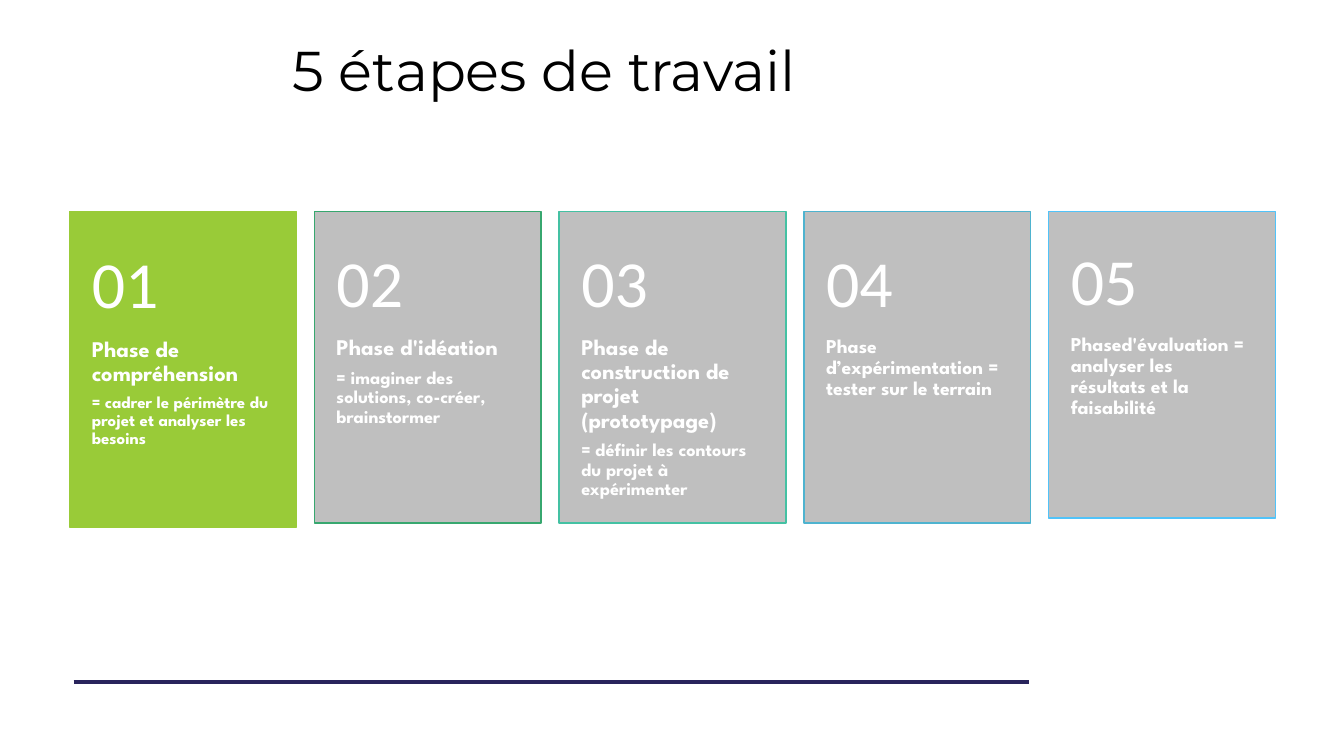
from dataclasses import dataclass

from lxml.etree import SubElement
from pptx import Presentation
from pptx.dml.color import RGBColor
from pptx.enum.shapes import MSO_CONNECTOR, MSO_SHAPE
from pptx.enum.text import MSO_ANCHOR
from pptx.oxml.ns import qn
from pptx.util import Inches, Pt


@dataclass(frozen=True)
class Theme:
    """Colours, fonts and type sizes of the slide."""
    ink: str = "000000"
    white: str = "FFFFFF"
    rule: str = "29245C"
    active: str = "99CB38"
    inactive: str = "BFBFBF"
    title_font: str = "Montserrat"
    number_font: str = "Calibri"
    phase_font: str = "League Spartan"
    title_size: int = 40
    number_size: int = 47
    phase_size: int = 16
    long_phase_size: int = 14
    detail_size: int = 13
    small_detail_size: int = 12


THEME = Theme()
CARD_LEFT, CARD_TOP, CARD_WIDTH, CARD_PITCH = 0.69, 2.1, 2.25, 2.4275
NUMBER_HEIGHT, NUMBER_RISE = 1.08, 1.04

STEPS = [
    (3.13, THEME.active, THEME.active,
     [("Phase de compréhension", THEME.phase_size),
      ("= cadrer le périmètre du projet et analyser les besoins", THEME.small_detail_size)]),
    (3.09, THEME.inactive, "37A76F",
     [("Phase d'idéation", THEME.phase_size),
      ("= imaginer des solutions, co-créer, brainstormer", THEME.detail_size)]),
    (3.09, THEME.inactive, "44C1A3",
     [("Phase de construction de projet (prototypage)", THEME.phase_size),
      ("= définir les contours du projet à expérimenter", THEME.detail_size)]),
    (3.09, THEME.inactive, "4EB3CF",
     [("Phase d’expérimentation = tester sur le terrain", THEME.long_phase_size)]),
    (3.04, THEME.inactive, "51C3F9",
     [("Phased'évaluation = analyser les résultats et la faisabilité", THEME.long_phase_size)]),
]


def add_text(slide, box, lines, font, color, insets, anchor=MSO_ANCHOR.TOP, bold=False, gap=0.35):
    """Add a wrapped text box with one paragraph per (text, size) pair."""
    frame = slide.shapes.add_textbox(*map(Inches, box)).text_frame
    frame.word_wrap = True
    frame.vertical_anchor = anchor
    frame.margin_left, frame.margin_top, frame.margin_right, frame.margin_bottom = map(Inches, insets)
    for index, (text, size) in enumerate(lines):
        paragraph = frame.add_paragraph() if index else frame.paragraphs[0]
        paragraph.line_spacing = 0.9
        paragraph.space_after = Pt(round(size * gap, 1))
        run = paragraph.add_run()
        run.text = text
        run.font.name = font
        run.font.size = Pt(size)
        run.font.bold = bold
        run.font.color.rgb = RGBColor.from_string(color)


def add_card(slide, left, height, fill, border):
    """Add the rectangle behind one step."""
    card = slide.shapes.add_shape(
        MSO_SHAPE.RECTANGLE, Inches(left), Inches(CARD_TOP), Inches(CARD_WIDTH), Inches(height))
    card.shadow.inherit = False
    card.fill.solid()
    card.fill.fore_color.rgb = RGBColor.from_string(fill)
    card.line.color.rgb = RGBColor.from_string(border)
    card.line.width = Pt(1)


def add_step(slide, index, height, fill, border, lines):
    """Add one numbered step, its text filling the lower 60 % of the card."""
    left = CARD_LEFT + index * CARD_PITCH
    phase_top = CARD_TOP + 0.4 * height
    add_card(slide, left, height, fill, border)
    add_text(slide, (left, phase_top, CARD_WIDTH, 0.6 * height), lines,
             THEME.phase_font, THEME.white, (0.22, 0, 0.22, 0.36), bold=True)
    add_text(slide, (left, phase_top - NUMBER_RISE, CARD_WIDTH, NUMBER_HEIGHT),
             [(f"{index + 1:02d}", THEME.number_size)],
             THEME.number_font, THEME.white, (0.22, 0.18, 0.22, 0.18), MSO_ANCHOR.MIDDLE)


def add_rule(slide, start, end, y):
    """Add the horizontal rule at the foot of the slide."""
    rule = slide.shapes.add_connector(
        MSO_CONNECTOR.STRAIGHT, Inches(start), Inches(y), Inches(end), Inches(y))
    rule.line.color.rgb = RGBColor.from_string(THEME.rule)
    rule.line.width = Pt(3)
    SubElement(rule._element.spPr, qn("a:effectLst"))


def main():
    """Build the slide and save it."""
    deck = Presentation()
    deck.slide_width, deck.slide_height = Inches(13.33), Inches(7.5)
    slide = deck.slides.add_slide(deck.slide_layouts[6])
    add_rule(slide, 0.73, 10.21, 6.77)
    add_text(slide, (2.8, 0, 10, 1.45), [("5 étapes de travail", THEME.title_size)],
             THEME.title_font, THEME.ink, (0.1, 0.05, 0.1, 0.05), MSO_ANCHOR.MIDDLE, gap=0)
    for index, step in enumerate(STEPS):
        add_step(slide, index, *step)
    deck.save("out.pptx")


if __name__ == "__main__":
    main()
